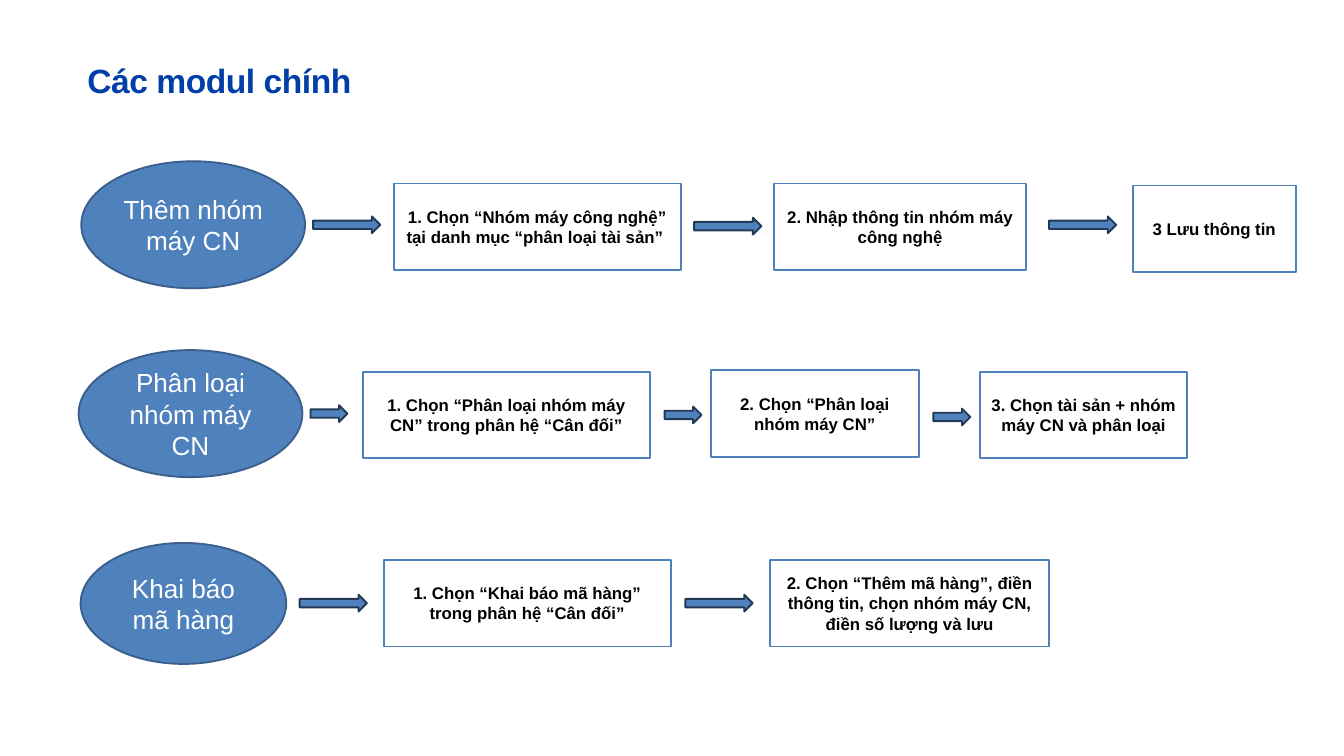
"""Builds the slide of main modules as three rows of process steps."""
from pptx import Presentation
from pptx.dml.color import RGBColor
from pptx.enum import shapes, text
from pptx.util import Inches, Pt

BLUE = RGBColor(0x4F, 0x81, 0xBD)
OVAL_EDGE = RGBColor(0x3A, 0x5F, 0x8C)
ARROW_EDGE = RGBColor(0x23, 0x39, 0x53)
TITLE_BLUE = RGBColor(0x00, 0x3E, 0xA8)
WHITE = RGBColor(0xFF, 0xFF, 0xFF)
BLACK = RGBColor(0x00, 0x00, 0x00)
STEP_HEIGHT = 1.29
ARROW_HEIGHT = 0.25

deck = Presentation()
deck.slide_width, deck.slide_height = Inches(20), Inches(11.25)
page = deck.slides.add_slide(deck.slide_layouts[6])


def write(box, words, size, color, bold=False, align=text.PP_ALIGN.CENTER,
          anchor=text.MSO_ANCHOR.MIDDLE, margins=(0.1, 0.05), leading=None, spacing=None):
    frame = box.text_frame
    frame.word_wrap = True
    frame.vertical_anchor = anchor
    frame.margin_left = frame.margin_right = Inches(margins[0])
    frame.margin_top = frame.margin_bottom = Inches(margins[1])
    para = frame.paragraphs[0]
    para.alignment = align
    if leading:
        para.line_spacing = Pt(leading)
    span = para.add_run()
    span.text = words
    span.font.name = "Arial"
    span.font.size = Pt(size)
    span.font.bold = bold
    span.font.color.rgb = color
    if spacing is not None:
        span.font._element.set("spc", str(int(spacing * 100)))


def add_block(kind, left, top, width, height, fill, edge):
    block = page.shapes.add_shape(kind, Inches(left), Inches(top), Inches(width), Inches(height))
    block.shadow.inherit = False
    block.fill.solid()
    block.fill.fore_color.rgb = fill
    block.line.color.rgb = edge
    block.line.width = Pt(2)
    return block


title = page.shapes.add_textbox(Inches(1.3), Inches(0.88), Inches(7.37), Inches(0.58))
write(title, "Các modul chính", size=36, color=TITLE_BLUE, bold=True, align=text.PP_ALIGN.LEFT,
      anchor=text.MSO_ANCHOR.TOP, margins=(0, 0), leading=43.5, spacing=-0.5)

rows = [
    {"module": ("Thêm nhóm máy CN", 1.21, 2.4, 3.33, 1.89),
     "arrow_width": 1,
     "arrows": [(4.66, 3.22), (10.33, 3.24), (15.61, 3.22)],
     "steps": [("1. Chọn “Nhóm máy công nghệ” tại danh mục “phân loại tài sản” ", 5.86, 2.73, 4.27),
               ("2. Nhập thông tin nhóm máy công nghệ", 11.52, 2.73, 3.75),
               ("3 Lưu thông tin", 16.86, 2.76, 2.42)]},
    {"module": ("Phân loại nhóm máy CN", 1.17, 5.21, 3.33, 1.89),
     "arrow_width": 0.55,
     "arrows": [(4.62, 6.03), (9.89, 6.05), (13.89, 6.08)],
     "steps": [("1. Chọn “Phân loại nhóm máy CN” trong phân hệ “Cân đối”", 5.4, 5.53, 4.27),
               ("2. Chọn “Phân loại nhóm máy CN”", 10.58, 5.51, 3.09),
               ("3. Chọn tài sản + nhóm máy CN và phân loại", 14.58, 5.53, 3.09)]},
    {"module": ("Khai báo mã hàng", 1.2, 8.08, 3.06, 1.8),
     "arrow_width": 1,
     "arrows": [(4.46, 8.85), (10.2, 8.85)],
     "steps": [("1. Chọn “Khai báo mã hàng” trong phân hệ “Cân đối”", 5.71, 8.33, 4.27),
               ("2. Chọn “Thêm mã hàng”, điền thông tin, chọn nhóm máy CN, điền số lượng và lưu",
                11.46, 8.33, 4.15)]},
]

for row in rows:
    name, *place = row["module"]
    oval = add_block(shapes.MSO_SHAPE.OVAL, *place, fill=BLUE, edge=OVAL_EDGE)
    write(oval, name, size=28, color=WHITE)
    for (arrow_left, arrow_top), (words, left, top, width) in zip(row["arrows"], row["steps"]):
        add_block(shapes.MSO_SHAPE.RIGHT_ARROW, arrow_left, arrow_top, row["arrow_width"],
                  ARROW_HEIGHT, fill=BLUE, edge=ARROW_EDGE)
        step = add_block(shapes.MSO_SHAPE.RECTANGLE, left, top, width, STEP_HEIGHT,
                         fill=WHITE, edge=BLUE)
        write(step, words, size=18, color=BLACK, bold=True)

deck.save("out.pptx")
